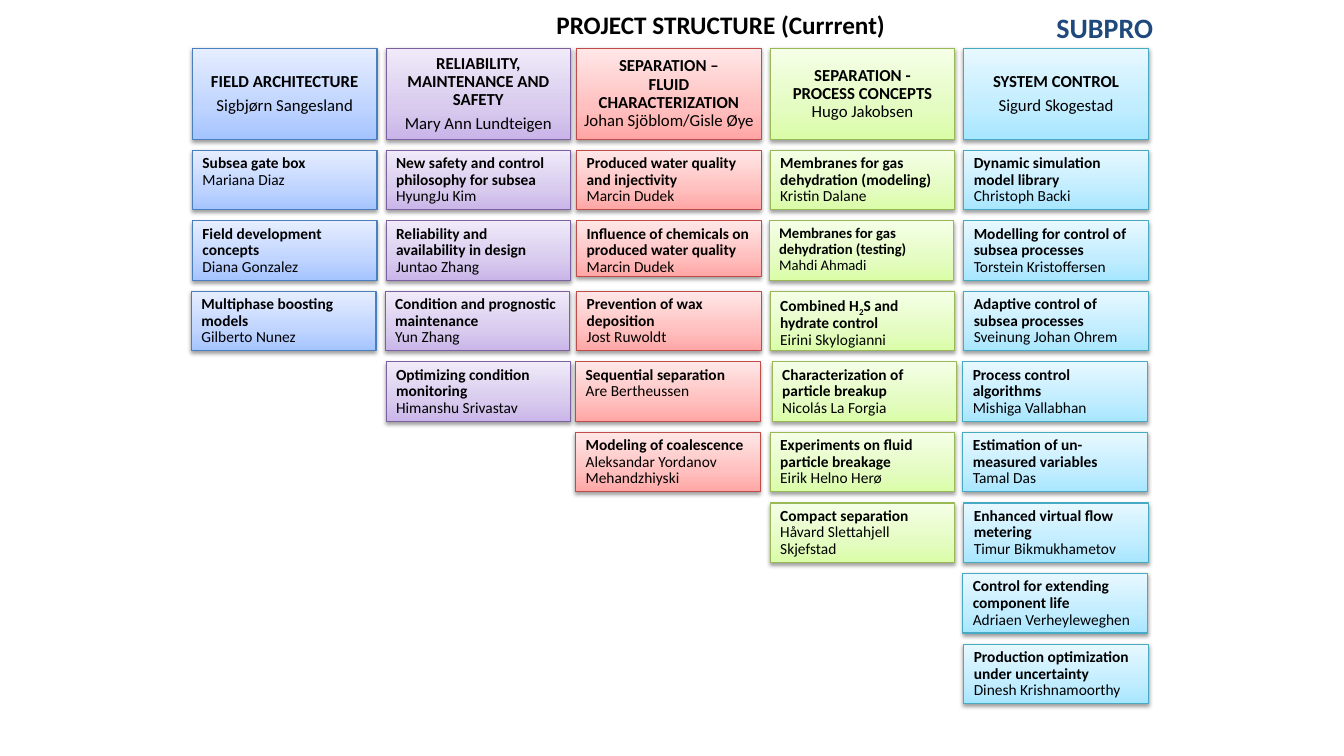
from pptx import Presentation
from pptx.dml.color import RGBColor
from pptx.enum.shapes import MSO_SHAPE as Shape
from pptx.enum.text import MSO_ANCHOR as Anchor, PP_ALIGN as Align
from pptx.oxml import parse_xml
from pptx.oxml.ns import nsdecls
from pptx.util import Inches, Pt

BLACK = RGBColor(0x00, 0x00, 0x00)
NAVY = RGBColor(0x1F, 0x49, 0x7D)
BLUE = [RGBColor.from_string(code) for code in ("A4C4FF", "BFD4FF", "E6EEFF", "4B7EBC")]
PURPLE = [RGBColor.from_string(code) for code in ("C9B5E8", "D8CBEE", "F0EAF9", "7D60A0")]
RED = [RGBColor.from_string(code) for code in ("FFA6A5", "FFC0BF", "FFE7E7", "BF4C48")]
GREEN = [RGBColor.from_string(code) for code in ("DAFDA7", "E4FCC2", "F5FFE7", "98B955")]
CYAN = [RGBColor.from_string(code) for code in ("A7E6FF", "C1EDFF", "E7F8FF", "46AAC5")]

BOX_WIDTH = 1.83
HEADER_TOP, HEADER_HEIGHT = 0.48, 0.9
CARD_TOP, CARD_PITCH, CARD_HEIGHT = 1.49, 0.7, 0.59

AREAS = [
    (1.91, BLUE, ("FIELD ARCHITECTURE", "Sigbjørn Sangesland"), [
        ("Subsea gate box", "Mariana Diaz"),
        ("Field development\nconcepts", "Diana Gonzalez"),
        ("Multiphase boosting models", "Gilberto Nunez"),
    ]),
    (3.83, PURPLE, ("RELIABILITY, MAINTENANCE AND SAFETY", "Mary Ann Lundteigen"), [
        ("New safety and control philosophy for subsea", "HyungJu Kim"),
        ("Reliability and availability in design", "Juntao Zhang"),
        ("Condition and prognostic maintenance", "Yun Zhang"),
        ("Optimizing condition monitoring", "Himanshu Srivastav"),
    ]),
    (5.72, RED, ("SEPARATION –\nFLUID CHARACTERIZATION\n", "Johan Sjöblom/Gisle Øye"), [
        ("Produced water quality and injectivity", "Marcin Dudek"),
        ("Influence of chemicals on produced water quality", "Marcin Dudek"),
        ("Prevention of wax deposition", "Jost Ruwoldt"),
        ("Sequential separation", "Are Bertheussen"),
        ("Modeling of coalescence", "Aleksandar Yordanov Mehandzhiyski"),
    ]),
    (7.64, GREEN, ("SEPARATION -\nPROCESS CONCEPTS\n", "Hugo Jakobsen"), [
        ("Membranes for gas dehydration (modeling)", "Kristin Dalane"),
        ("Membranes for gas dehydration (testing)", "Mahdi Ahmadi"),
        ("Combined H|2|S and hydrate control", "Eirini Skylogianni"),
        ("Characterization of particle breakup", "Nicolás La Forgia"),
        ("Experiments on fluid particle breakage", "Eirik Helno Herø"),
        ("Compact separation", "Håvard Slettahjell Skjefstad"),
    ]),
    (9.56, CYAN, ("SYSTEM CONTROL", "Sigurd Skogestad"), [
        ("Dynamic simulation model library", "Christoph Backi"),
        ("Modelling for control of subsea processes", "Torstein Kristoffersen"),
        ("Adaptive control of subsea processes", "Sveinung Johan Ohrem"),
        ("Process control algorithms", "Mishiga Vallabhan"),
        ("Estimation of un-measured variables", "Tamal Das"),
        ("Enhanced virtual flow metering", "Timur Bikmukhametov"),
        ("Control for extending component life", "Adriaen Verheyleweghen"),
        ("Production optimization under uncertainty", "Dinesh Krishnamoorthy"),
    ]),
]
SHIFTS = {
    "Yun Zhang": -0.01, "Gilberto Nunez": -0.01, "Are Bertheussen": -0.01,
    "Aleksandar Yordanov Mehandzhiyski": -0.01, "Mahdi Ahmadi": -0.01,
    "Nicolás La Forgia": 0.02, "Mishiga Vallabhan": -0.01, "Tamal Das": -0.01,
    "Adriaen Verheyleweghen": -0.01,
}
SMALL_TEXT = {"Membranes for gas dehydration (testing)": 10.5}
LOW_CARDS = {"Influence of chemicals on produced water quality": 0.55}


class ProjectSlide:
    """Draws the project chart on one slide in a shared style."""

    def __init__(self, slide, font="Calibri"):
        self.slide = slide
        self.font = font

    def run(self, paragraph, text, size, bold=True, color=BLACK):
        run = paragraph.add_run()
        run.text = text
        run.font.name = self.font
        run.font.size = Pt(size)
        run.font.bold = bold
        run.font.color.rgb = color
        return run

    def heading(self, text, left, top, width, height, size, color):
        box = self.slide.shapes.add_textbox(
            Inches(left), Inches(top), Inches(width), Inches(height))
        box.text_frame.word_wrap = False
        self.run(box.text_frame.paragraphs[0], text, size, color=color)

    def box(self, left, top, height, palette):
        shape = self.slide.shapes.add_shape(
            Shape.RECTANGLE, Inches(left), Inches(top), Inches(BOX_WIDTH), Inches(height))
        stops = "".join(
            f'<a:gs pos="{position}"><a:srgbClr val="{color}"/></a:gs>'
            for position, color in zip((0, 35000, 100000), palette))
        gradient = parse_xml(
            f'<a:gradFill {nsdecls("a")} rotWithShape="1"><a:gsLst>{stops}</a:gsLst>'
            '<a:lin ang="16200000" scaled="0"/></a:gradFill>')
        shape.line.color.rgb = palette[3]
        shape.line.width = Pt(0.75)
        properties = shape.element.spPr
        properties.insert(2, gradient)
        properties.append(parse_xml(
            f'<a:effectLst {nsdecls("a")}><a:outerShdw blurRad="{Pt(3.1)}" dist="{Pt(1.6)}" '
            'dir="5400000" rotWithShape="0"><a:srgbClr val="000000"><a:alpha val="38000"/>'
            '</a:srgbClr></a:outerShdw></a:effectLst>'))
        shape.text_frame.word_wrap = True
        return shape.text_frame

    def paragraph(self, paragraph, align, space_after):
        paragraph.alignment = align
        paragraph.line_spacing = 0.9
        paragraph.space_after = Pt(space_after)
        return paragraph

    def entry(self, frame, title, person, size, align, space_after=0):
        paragraph = self.paragraph(frame.paragraphs[0], align, space_after)
        for line_number, line in enumerate(title.split("\n")):
            if line_number:
                paragraph.add_line_break()
            for part_number, part in enumerate(line.split("|")):
                if part:
                    run = self.run(paragraph, part, size)
                    if part_number % 2:
                        run.font._element.set("baseline", "-25000")
        if not title.endswith("\n"):
            paragraph = self.paragraph(frame.add_paragraph(), align, space_after)
        self.run(paragraph, person, size, bold=False)

    def header(self, left, palette, title, person):
        frame = self.box(left, HEADER_TOP, HEADER_HEIGHT, palette)
        frame.vertical_anchor = Anchor.MIDDLE
        frame.margin_left = frame.margin_right = Inches(0.01)
        frame.margin_top = frame.margin_bottom = Inches(0.01)
        self.entry(frame, title, person, 12, Align.CENTER, 4.2)

    def card(self, left, row, palette, title, person):
        frame = self.box(left + SHIFTS.get(person, 0), CARD_TOP + row * CARD_PITCH,
                         LOW_CARDS.get(title, CARD_HEIGHT), palette)
        frame.vertical_anchor = Anchor.TOP
        self.entry(frame, title, person, SMALL_TEXT.get(title, 11), Align.LEFT)


def main():
    presentation = Presentation()
    presentation.slide_width = Inches(13.33)
    presentation.slide_height = Inches(7.5)
    chart = ProjectSlide(presentation.slides.add_slide(presentation.slide_layouts[6]))
    chart.heading("PROJECT STRUCTURE (Currrent)", 5.42, 0.04, 3.5, 0.4, 18, BLACK)
    chart.heading("SUBPRO", 10.38, 0.06, 1.17, 0.44, 20, NAVY)
    for left, palette, leader, projects in AREAS:
        chart.header(left, palette, *leader)
        for row, project in enumerate(projects):
            chart.card(left, row, palette, *project)
    presentation.save("out.pptx")


if __name__ == "__main__":
    main()
